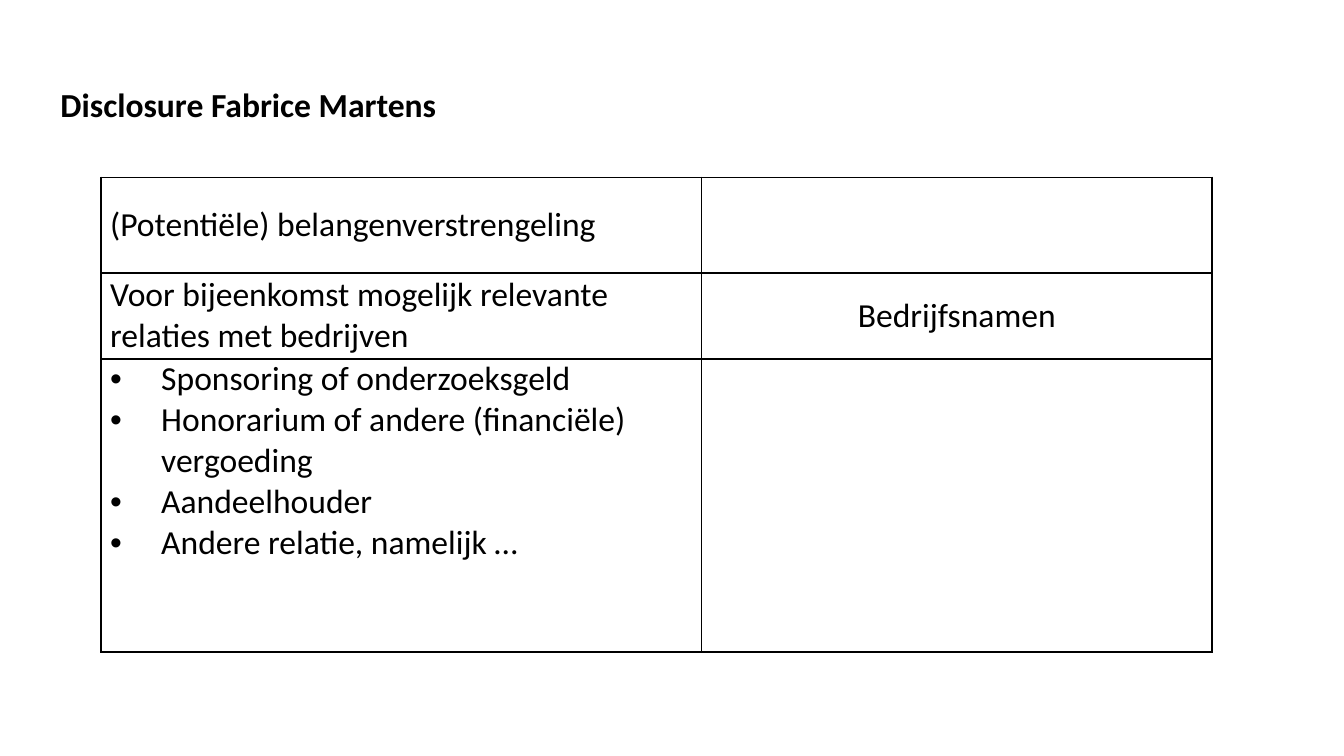
from pptx import Presentation
from pptx.dml.color import RGBColor
from pptx.enum.text import MSO_ANCHOR as Anchor, MSO_AUTO_SIZE as AutoSize, PP_ALIGN as Align
from pptx.oxml.ns import qn
from pptx.util import Inches, Pt
from lxml.etree import SubElement

BLACK = RGBColor(0, 0, 0)
FONT = {"name": "Calibri", "size": Pt(18), "bold": False}
TITLE_FONT = {**FONT, "bold": True}
MARGINS = {"margin_left": Inches(0.07), "margin_right": Inches(0.07),
           "margin_top": 0, "margin_bottom": 0}
COLUMNS = [4.47, 3.8]
ROWS = [0.71, 0.64, 2.18]
RELATIONS = ["Sponsoring of onderzoeksgeld",
             "Honorarium of andere (financiële) vergoeding",
             "Aandeelhouder",
             "Andere relatie, namelijk …"]
# Each cell: lines of text, alignment, anchor, bulleted
CELLS = [
    [(["(Potentiële) belangenverstrengeling"], Align.LEFT, Anchor.MIDDLE, False), None],
    [(["Voor bijeenkomst mogelijk relevante relaties met bedrijven"],
      Align.LEFT, Anchor.MIDDLE, False),
     (["Bedrijfsnamen"], Align.CENTER, Anchor.MIDDLE, False)],
    [(RELATIONS, Align.LEFT, Anchor.TOP, True), None],
]


def write(para, text, font, align):
    para.alignment = align
    span = para.add_run()
    span.text = text
    for key, value in font.items():
        setattr(span.font, key, value)
    span.font.color.rgb = BLACK


def add_borders(cell):
    props = cell._tc.get_or_add_tcPr()
    for position, side in enumerate(("lnL", "lnR", "lnT", "lnB")):
        line = SubElement(props, qn(f"a:{side}"), w=str(Pt(1)))
        fill = SubElement(line, qn("a:solidFill"))
        SubElement(fill, qn("a:srgbClr"), val=str(BLACK))
        props.insert(position, line)


# Widescreen page, 16:9
deck = Presentation()
deck.slide_width, deck.slide_height = Inches(10), Inches(10 * 9 / 16)
page = deck.slides.add_slide(deck.slide_layouts[5])

# Title
title = page.shapes.title
title.left, title.top = Inches(0.35), Inches(0.56)
title.width, title.height = Inches(9.31), Inches(0.43)
title.text_frame.auto_size = AutoSize.NONE
title.text_frame.vertical_anchor = Anchor.MIDDLE
write(title.text_frame.paragraphs[0], "Disclosure Fabrice Martens", TITLE_FONT, Align.LEFT)

# Disclosure table
table = page.shapes.add_table(len(ROWS), len(COLUMNS), Inches(0.75), Inches(1.32),
                              Inches(sum(COLUMNS)), Inches(sum(ROWS))).table
table.first_row = table.horz_banding = False
for column, width in zip(table.columns, COLUMNS):
    column.width = Inches(width)
for row, height, contents in zip(table.rows, ROWS, CELLS):
    row.height = Inches(height)
    for cell, content in zip(row.cells, contents):
        cell.fill.background()
        add_borders(cell)
        for key, value in MARGINS.items():
            setattr(cell, key, value)
        if content is None:
            continue
        lines, align, cell.vertical_anchor, bulleted = content
        for index, text in enumerate(lines):
            frame = cell.text_frame
            para = frame.add_paragraph() if index else frame.paragraphs[0]
            write(para, text, FONT, align)
            if bulleted:
                props = para._p.get_or_add_pPr()
                props.set("marL", str(Inches(0.38)))
                props.set("indent", str(Inches(-0.38)))
                SubElement(props, qn("a:buFont"), typeface="Arial")
                SubElement(props, qn("a:buChar"), char="•")

deck.save("out.pptx")
